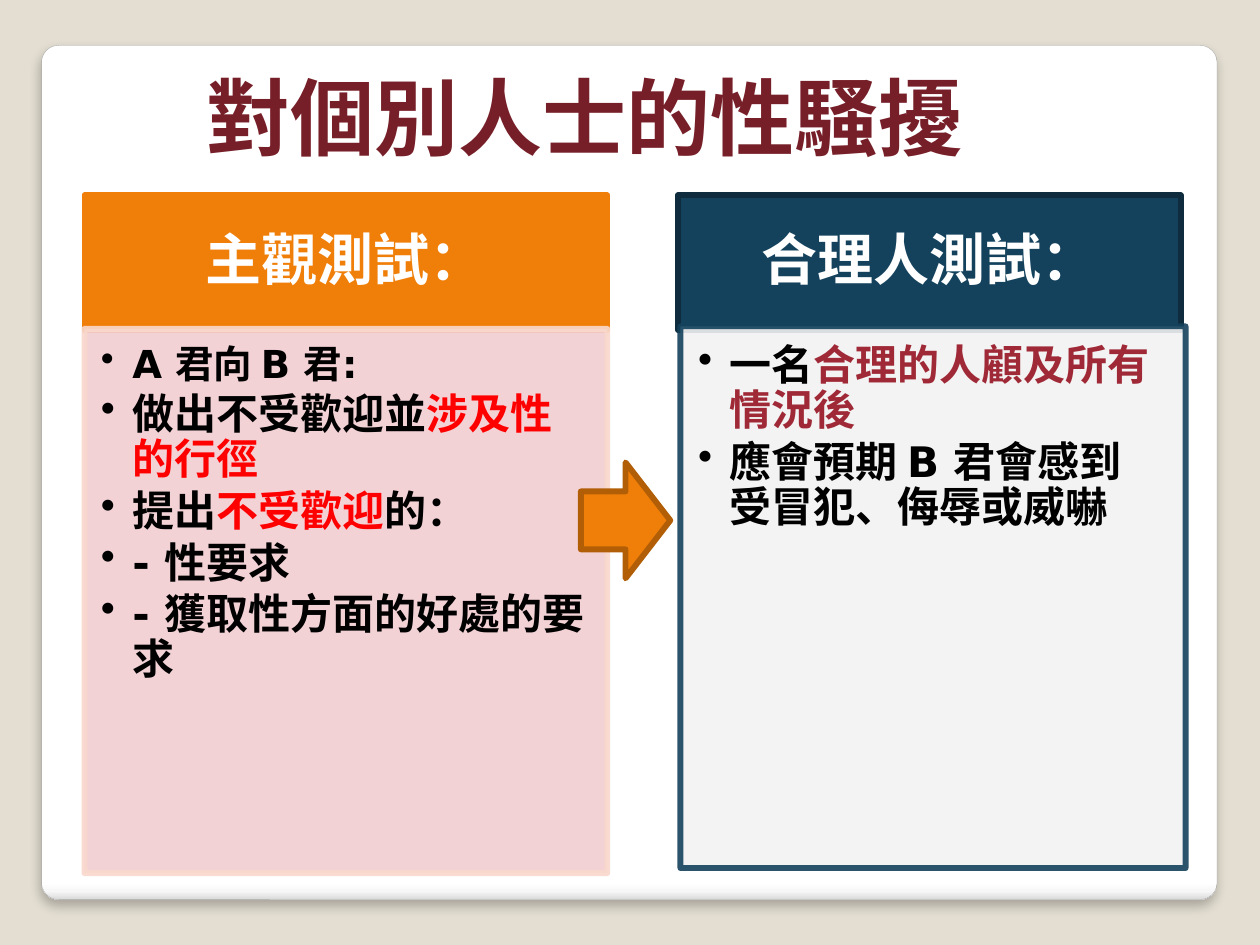
import pptx
import pptx.util
import pptx.dml.color
import pptx.enum.shapes
import pptx.enum.text
import pptx.oxml

COLS, ROWS = 100, 75
CELL = pptx.util.Inches(0.1)
LATIN, CJK = "DejaVu Sans", "Noto Sans CJK SC"
NS = 'xmlns:a="http://schemas.openxmlformats.org/drawingml/2006/main"'
SHAPE = pptx.enum.shapes.MSO_SHAPE
ALIGN = pptx.enum.text.PP_ALIGN
ANCHOR = pptx.enum.text.MSO_ANCHOR
BLACK, RED, CRIMSON, ORANGE, NAVY = "000000", "FF0000", "9F2936", "F07F09", "14425D"


def rgb(value):
    """Return the colour for a hex string."""
    return pptx.dml.color.RGBColor.from_string(value)


def cells(*counts):
    """Convert grid counts to lengths."""
    return [int(n * CELL) for n in counts]


def element(xml):
    """Parse a DrawingML fragment whose root lacks its namespace."""
    return pptx.oxml.parse_xml(xml.replace(">", f" {NS}>", 1))


def add_box(slide, kind, box, fill, line, width=3.35, alpha=None):
    """Add a filled and outlined shape in a grid box."""
    sp = slide.shapes.add_shape(kind, *cells(*box))
    sp.shadow.inherit = False
    sp.fill.solid()
    sp.fill.fore_color.rgb = rgb(fill)
    sp.line.color.rgb = rgb(line)
    sp.line.width = pptx.util.Pt(width)
    if alpha:
        for color in sp._element.spPr.iter("{*}srgbClr"):
            color.append(element(f'<a:alpha val="{alpha * 1000}"></a:alpha>'))
    return sp


def add_run(p, text, size, color, latin=LATIN):
    """Add one bold run with Latin and East Asian fonts."""
    r = p.add_run()
    r.text = text
    r.font.size = pptx.util.Pt(size)
    r.font.bold = True
    r.font.name = latin
    r.font.color.rgb = rgb(color)
    r.font._element.find("{*}latin").addnext(element(f'<a:ea typeface="{CJK}"></a:ea>'))


def set_frame(sp, anchor, margins):
    """Wrap, anchor and inset a text frame, and return it."""
    tf = sp.text_frame
    tf.word_wrap = True
    tf.auto_size = pptx.enum.text.MSO_AUTO_SIZE.NONE
    tf.vertical_anchor = anchor
    tf.margin_left, tf.margin_top, tf.margin_right, tf.margin_bottom = cells(*margins)
    return tf


def add_card(slide, box):
    """Add the rounded white card with its soft shadow."""
    sp = add_box(slide, SHAPE.ROUNDED_RECTANGLE, box, "FFFFFF", "A4A4A4", 0.16)
    sp.adjustments[0] = 0.02
    stops = [(0, "FFFFFF"), (98, "FFFFFF"), (99, "F7F7F7"), (100, "DADADA")]
    gs = "".join(f'<a:gs pos="{pos * 1000}"><a:srgbClr val="{c}"/></a:gs>' for pos, c in stops)
    spPr = sp._element.spPr
    spPr.replace(spPr.find("{*}solidFill"), element(
        f'<a:gradFill><a:gsLst>{gs}</a:gsLst><a:lin ang="5400000" scaled="0"/></a:gradFill>'))
    spPr.find("{*}effectLst").append(element(
        f'<a:outerShdw blurRad="{pptx.util.Pt(6)}" dist="{pptx.util.Pt(4)}" dir="5400000" rotWithShape="0">'
        '<a:srgbClr val="000000"><a:alpha val="25000"/></a:srgbClr></a:outerShdw>'))


def add_title(slide, box, text):
    """Place and format the title placeholder."""
    sp = slide.shapes.title
    sp.left, sp.top, sp.width, sp.height = cells(*box)
    p = set_frame(sp, ANCHOR.BOTTOM, (1, 0.5, 1, 0.5)).paragraphs[0]
    p.alignment = ALIGN.LEFT
    add_run(p, text, 48, "771F28", CJK)


def add_heading(slide, box, text, fill, line):
    """Add a column heading bar."""
    sp = add_box(slide, SHAPE.RECTANGLE, box, fill, line)
    p = set_frame(sp, ANCHOR.MIDDLE, (2.5, 1.4, 2.5, 1.4)).paragraphs[0]
    p.alignment = ALIGN.CENTER
    p.line_spacing = 0.9
    add_run(p, text, 32, "FFFFFF")


def add_body(slide, box, items, fill, line, margins):
    """Add a column panel with bulleted paragraphs."""
    sp = add_box(slide, SHAPE.RECTANGLE, box, fill, line, alpha=90)
    tf = set_frame(sp, ANCHOR.TOP, margins)
    indent = pptx.util.Inches(0.25)
    for i, runs in enumerate(items):
        p = tf.add_paragraph() if i else tf.paragraphs[0]
        pPr = p._p.get_or_add_pPr()
        pPr.set("marL", str(indent))
        pPr.set("indent", str(-indent))
        pPr.append(element('<a:buChar char="•"></a:buChar>'))
        p.alignment = ALIGN.LEFT
        p.line_spacing = 0.9
        p.space_after = pptx.util.Pt(3.6)
        for text, size, color in runs:
            add_run(p, text, size, color)


def main():
    """Build and save the slide."""
    prs = pptx.Presentation()
    prs.slide_width, prs.slide_height = cells(COLS, ROWS)
    slide = prs.slides.add_slide(prs.slide_layouts[5])
    slide.background.fill.solid()
    slide.background.fill.fore_color.rgb = rgb("E3DED1")

    add_card(slide, (3.3, 3.6, 93.3, 67.8))
    title = slide.shapes.title._element
    title.getparent().append(title)
    add_title(slide, (15.4, 2.9, 76.6, 10.8), "對個別人士的性騷擾")

    subjective = [
        [("A 君向 B 君:", 22, BLACK)],
        [("做出不受歡迎並", 24, BLACK), ("涉及性的行徑", 24, RED)],
        [("提出", 24, BLACK), ("不受歡迎", 24, RED), ("的：", 24, BLACK)],
        [("- 性要求", 24, BLACK)],
        [("- 獲取性方面的好處的要求", 24, BLACK)],
    ]
    reasonable = [
        [("一名", 24, BLACK), ("合理的人顧及所有情況後", 24, CRIMSON)],
        [("應會預期 B 君會感到受冒犯、侮辱或威嚇", 24, BLACK)],
    ]
    add_heading(slide, (6.7, 15.5, 41.5, 10.7), "主觀測試：", ORANGE, ORANGE)
    add_body(slide, (6.7, 26.1, 41.5, 43.2), subjective, "F2CED2", "F9D8CC", (1.3, 1.3, 1.7, 1.9))
    add_heading(slide, (53.8, 15.5, 39.9, 10.7), "合理人測試：", NAVY, "0E2C3E")
    add_body(slide, (54, 25.9, 40.1, 43), reasonable, "F2F2F2", NAVY, (1.4, 1.4, 1.9, 2.1))
    add_box(slide, SHAPE.RIGHT_ARROW, (46.1, 36.7, 7.1, 9.2), ORANGE, "B25E07")
    prs.save("out.pptx")


if __name__ == "__main__":
    main()
